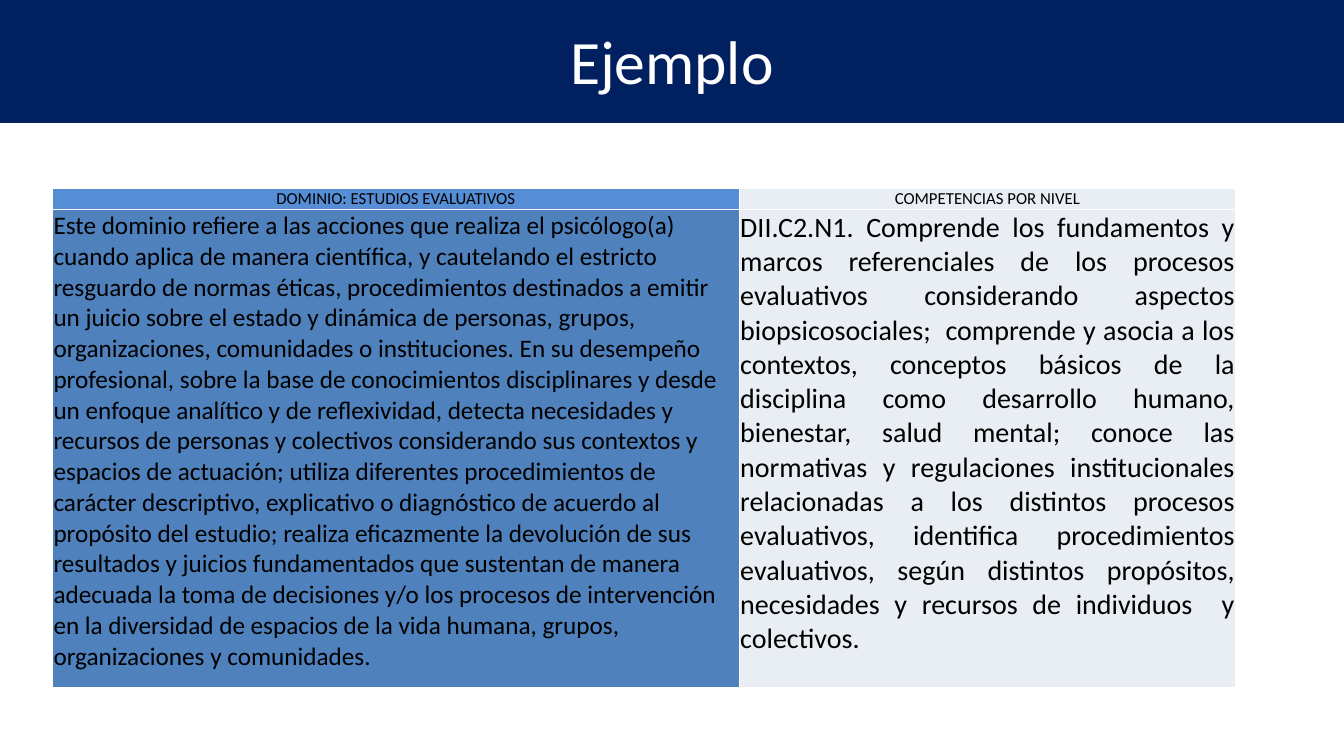
from dataclasses import dataclass

from lxml.etree import SubElement
from pptx import Presentation
from pptx.dml.color import RGBColor
from pptx.enum.text import MSO_ANCHOR, MSO_AUTO_SIZE, PP_ALIGN
from pptx.oxml.ns import qn
from pptx.slide import Slide
from pptx.table import _Cell
from pptx.text.text import TextFrame
from pptx.util import Pt

PX = 9525
FONT = "Calibri"
HUES = {
    "navy": "002060",
    "sky": "558ED5",
    "blue": "4F81BD",
    "pale": "E9EDF4",
    "white": "FFFFFF",
    "black": "000000",
}
COLS = (654, 473)
ROWS = (20, 455)

DOMAIN = " ".join((
    "Este dominio refiere a las acciones que realiza el psicólogo(a) cuando aplica",
    "de manera científica, y cautelando el estricto resguardo de normas éticas,",
    "procedimientos destinados a emitir un juicio sobre el estado y dinámica de",
    "personas, grupos, organizaciones, comunidades o instituciones. En su desempeño",
    "profesional, sobre la base de conocimientos disciplinares y desde un enfoque",
    "analítico y de reflexividad, detecta necesidades y recursos de personas y",
    "colectivos considerando sus contextos y espacios de actuación; utiliza",
    "diferentes procedimientos de carácter descriptivo, explicativo o diagnóstico de",
    "acuerdo al propósito del estudio; realiza eficazmente la devolución de sus",
    "resultados y juicios fundamentados que sustentan de manera adecuada la toma de",
    "decisiones y/o los procesos de intervención en la diversidad de espacios de la",
    "vida humana, grupos, organizaciones y comunidades.",
))
SKILLS = " ".join((
    "DII.C2.N1. Comprende los fundamentos y marcos referenciales de los procesos",
    "evaluativos considerando aspectos biopsicosociales;  comprende y asocia a los",
    "contextos, conceptos básicos de la disciplina como desarrollo humano, bienestar,",
    "salud mental; conoce las normativas y regulaciones institucionales relacionadas",
    "a los distintos procesos evaluativos, identifica procedimientos evaluativos,",
    "según distintos propósitos, necesidades y recursos de individuos  y colectivos.",
))


@dataclass
class Item:
    row: int
    col: int
    text: str
    fill: str
    size: int
    align: PP_ALIGN
    anchor: MSO_ANCHOR


ITEMS = (
    Item(0, 0, "DOMINIO: ESTUDIOS EVALUATIVOS", "sky", 12, PP_ALIGN.CENTER, MSO_ANCHOR.MIDDLE),
    Item(0, 1, "COMPETENCIAS POR NIVEL", "pale", 12, PP_ALIGN.CENTER, MSO_ANCHOR.MIDDLE),
    Item(1, 0, DOMAIN, "blue", 18, PP_ALIGN.LEFT, MSO_ANCHOR.TOP),
    Item(1, 1, SKILLS, "pale", 20, PP_ALIGN.JUSTIFY, MSO_ANCHOR.TOP),
)


def tint(name: str) -> RGBColor:
    return RGBColor.from_string(HUES[name])


def write(frame: TextFrame, text: str, *, size: int, hue: str = "black",
          align: PP_ALIGN = PP_ALIGN.LEFT) -> None:
    par = frame.paragraphs[0]
    par.alignment = align
    run = par.add_run()
    run.text = text
    run.font.name = FONT
    run.font.size = Pt(size)
    run.font.bold = False
    run.font.color.rgb = tint(hue)


def edge(cell: _Cell) -> None:
    props = cell._tc.get_or_add_tcPr()
    for spot, side in enumerate(("lnL", "lnR", "lnT", "lnB")):
        line = SubElement(props, qn(f"a:{side}"), w=str(Pt(1)))
        fill = SubElement(line, qn("a:solidFill"))
        SubElement(fill, qn("a:srgbClr"), val=HUES["white"])
        props.insert(spot, line)


def draw_cell(cell: _Cell, item: Item) -> None:
    cell.fill.solid()
    cell.fill.fore_color.rgb = tint(item.fill)
    cell.margin_left = cell.margin_right = cell.margin_top = PX
    cell.margin_bottom = 0
    cell.vertical_anchor = item.anchor
    write(cell.text_frame, item.text, size=item.size, align=item.align)
    edge(cell)


def draw_title(slide: Slide, wide: int) -> None:
    title = slide.shapes.title
    title.left, title.top = 0, -3 * PX
    title.width, title.height = wide, 120 * PX
    title.fill.solid()
    title.fill.fore_color.rgb = tint("navy")
    frame = title.text_frame
    frame.auto_size = MSO_AUTO_SIZE.NONE
    frame.vertical_anchor = MSO_ANCHOR.MIDDLE
    write(frame, "Ejemplo", size=44, hue="white", align=PP_ALIGN.CENTER)


def draw_table(slide: Slide) -> None:
    table = slide.shapes.add_table(
        len(ROWS), len(COLS), 50 * PX, 179 * PX, sum(COLS) * PX, sum(ROWS) * PX
    ).table
    for col, wide in zip(table.columns, COLS):
        col.width = wide * PX
    for row, high in zip(table.rows, ROWS):
        row.height = high * PX
    for item in ITEMS:
        draw_cell(table.cell(item.row, item.col), item)


def main() -> None:
    deck = Presentation()
    deck.slide_width, deck.slide_height = 1280 * PX, 720 * PX
    slide = deck.slides.add_slide(deck.slide_layouts[5])
    draw_title(slide, deck.slide_width)
    draw_table(slide)
    deck.save("out.pptx")


if __name__ == "__main__":
    main()
